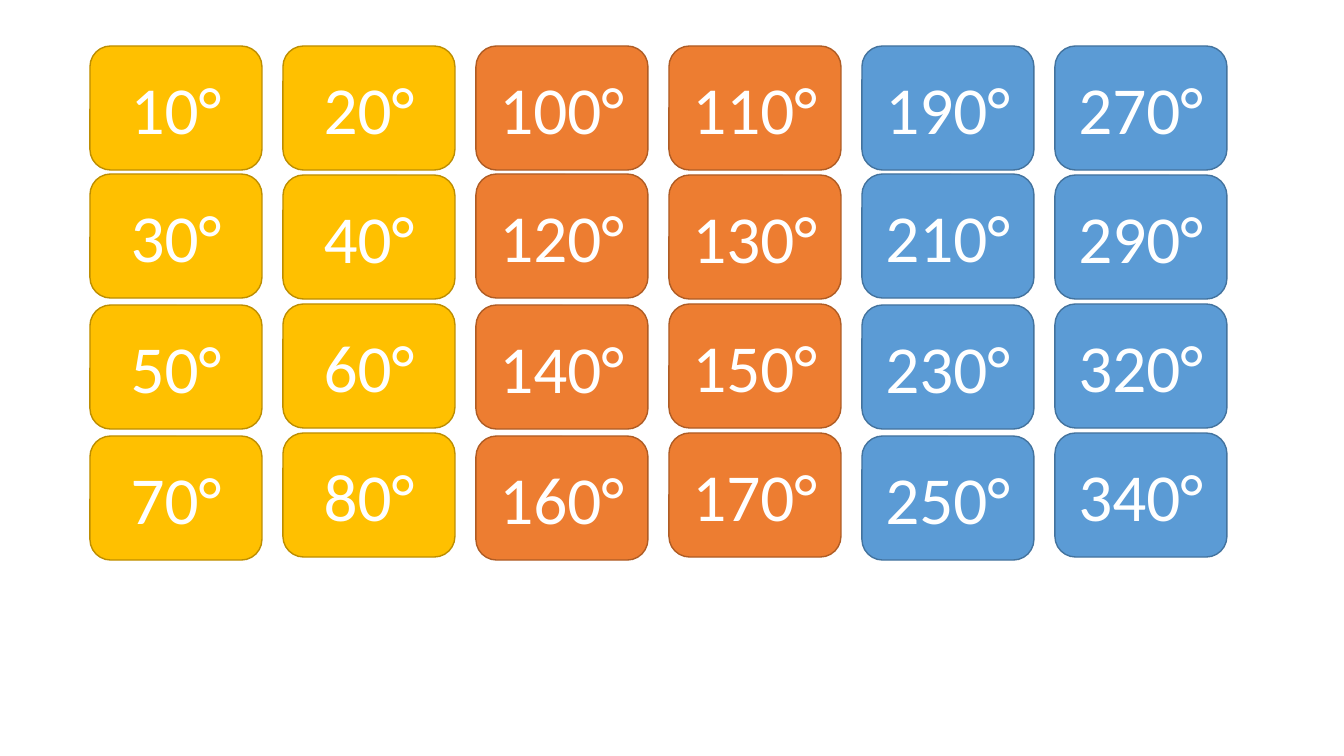
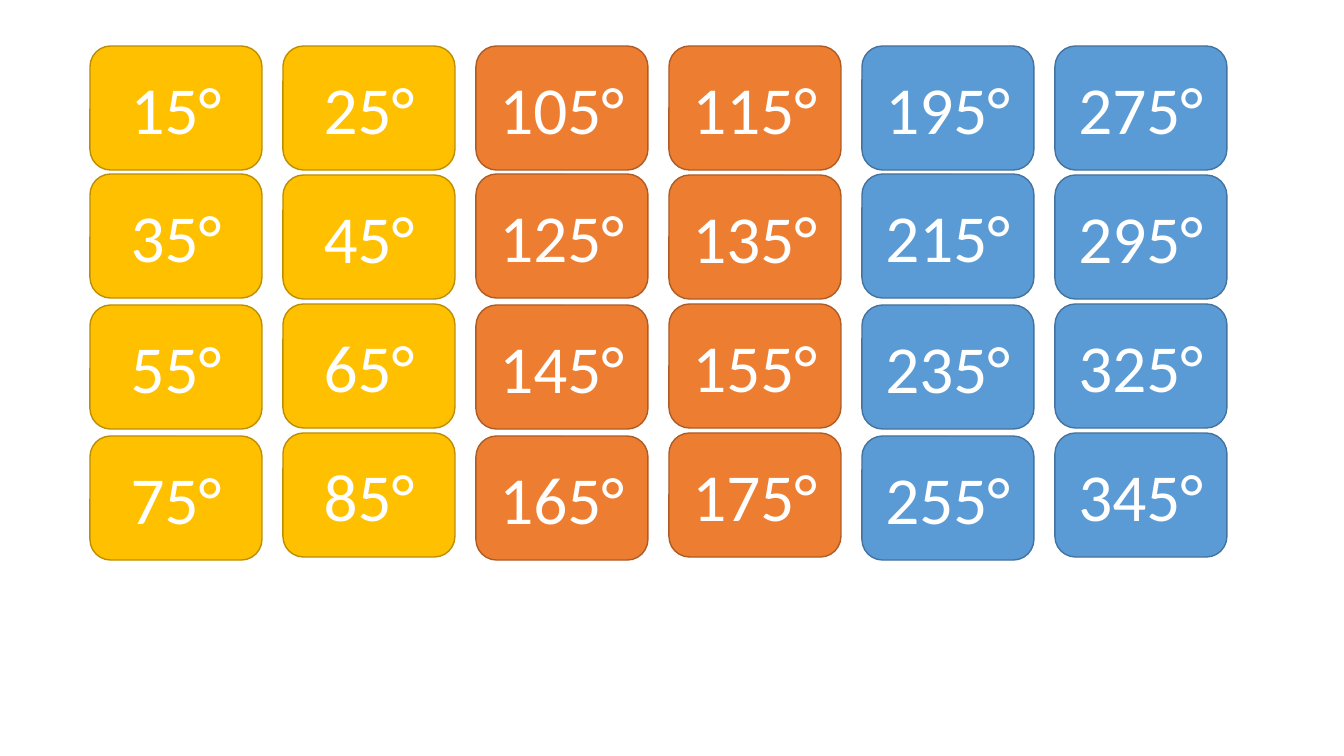
from pptx import Presentation
from pptx.dml.color import RGBColor
from pptx.enum.shapes import MSO_SHAPE
from pptx.enum.text import MSO_ANCHOR, PP_ALIGN
from pptx.util import Pt

ROUNDED = MSO_SHAPE.ROUNDED_RECTANGLE
CENTER = PP_ALIGN.CENTER
MIDDLE = MSO_ANCHOR.MIDDLE

# Slide size in px and the scale to EMU
SLIDE_WIDTH, SLIDE_HEIGHT = 1344, 756
EMU_PER_PX = 12192000 / SLIDE_WIDTH

COLORS = {
    "yellow": "FFC000", "yellow edge": "BD8E00",
    "orange": "ED7D31", "orange edge": "AF5C24",
    "blue": "5B9BD5", "blue edge": "43739E",
    "text": "FFFFFF",
}
FONT_FORMAT = {"name": "Calibri", "size": Pt(48)}

# Card grid: the left and right columns of a colour have their own row tops
CARD_WIDTH, CARD_HEIGHT = 172, 124
FIRST_LEFT, COLUMN_STEP = 90, 193
ROW_TOPS = ((46, 174, 305, 436), (46, 175, 304, 433))

# Angles of each column, top to bottom
ANGLE_COLUMNS = (
    ("yellow", (10, 30, 50, 70)),
    ("yellow", (20, 40, 60, 80)),
    ("orange", (100, 120, 140, 160)),
    ("orange", (110, 130, 150, 170)),
    ("blue", (190, 210, 230, 250)),
    ("blue", (270, 290, 320, 340)),
)
# Degrees added to every angle, one value per slide
SLIDE_OFFSETS = (0, 5)


def px(length):
    return round(length * EMU_PER_PX)


def rgb(name):
    return RGBColor.from_string(COLORS[name])


class Deck:
    """Holds the style and the current slide."""

    def __init__(self):
        self.presentation = Presentation()
        self.presentation.slide_width = px(SLIDE_WIDTH)
        self.presentation.slide_height = px(SLIDE_HEIGHT)
        self.slide = None

    def add_slide(self):
        blank_layout = self.presentation.slide_layouts[6]
        self.slide = self.presentation.slides.add_slide(blank_layout)

    def add_card(self, left, top, color, text):
        shape = self.slide.shapes.add_shape(
            ROUNDED, px(left), px(top), px(CARD_WIDTH), px(CARD_HEIGHT))
        shape.shadow.inherit = False
        shape.fill.solid()
        shape.fill.fore_color.rgb = rgb(color)
        shape.line.color.rgb = rgb(color + " edge")
        shape.line.width = Pt(1)

        # Label
        shape.text_frame.vertical_anchor = MIDDLE
        paragraph = shape.text_frame.paragraphs[0]
        paragraph.alignment = CENTER
        run = paragraph.add_run()
        run.text = text
        for attribute, value in FONT_FORMAT.items():
            setattr(run.font, attribute, value)
        run.font.color.rgb = rgb("text")

    def add_angle_grid(self, offset):
        for column, (color, angles) in enumerate(ANGLE_COLUMNS):
            left = FIRST_LEFT + column * COLUMN_STEP
            for top, angle in zip(ROW_TOPS[column % 2], angles):
                self.add_card(left, top, color, f"{angle + offset}°")


def main():
    deck = Deck()
    for offset in SLIDE_OFFSETS:
        deck.add_slide()
        deck.add_angle_grid(offset)
    deck.presentation.save("out.pptx")


if __name__ == "__main__":
    main()
